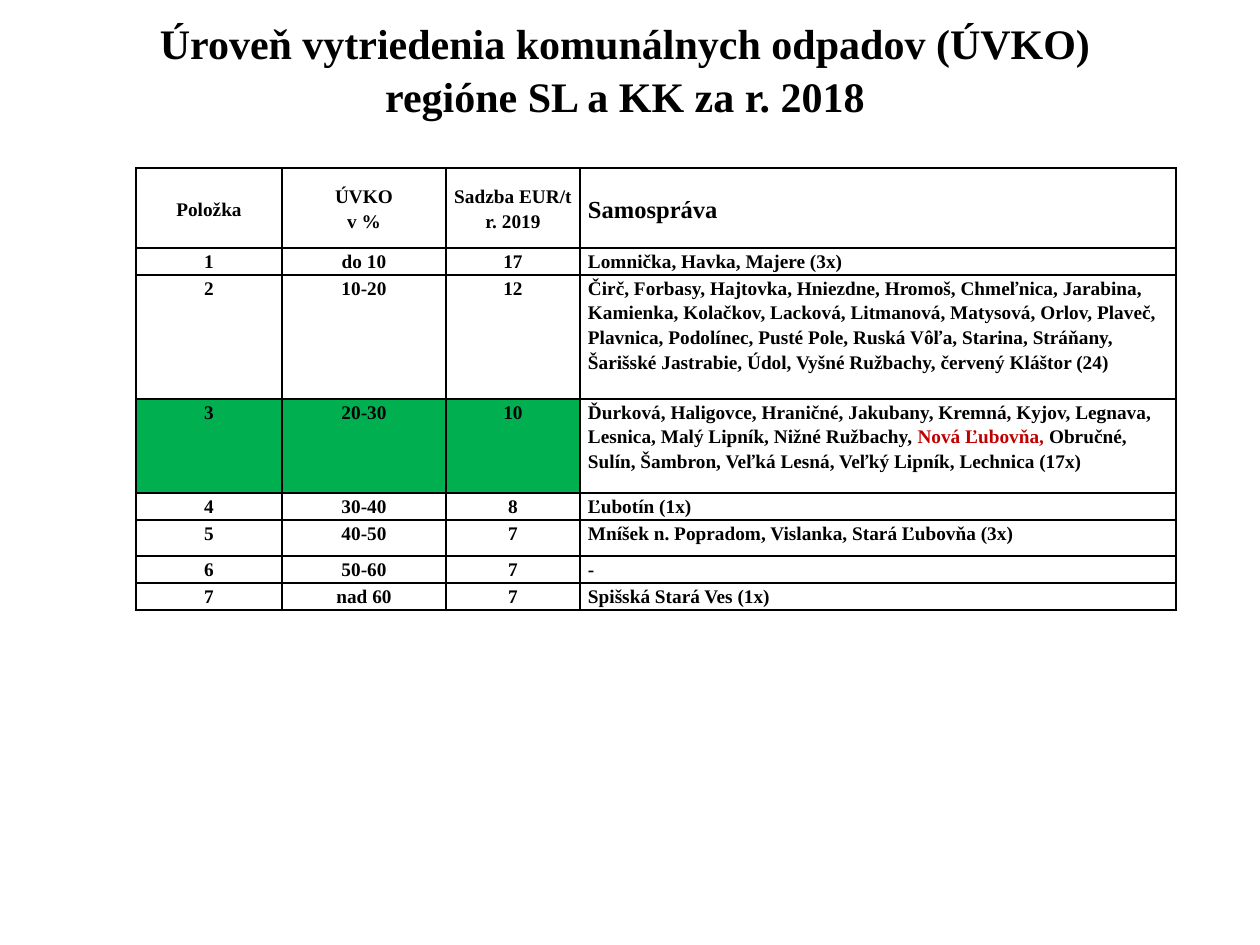
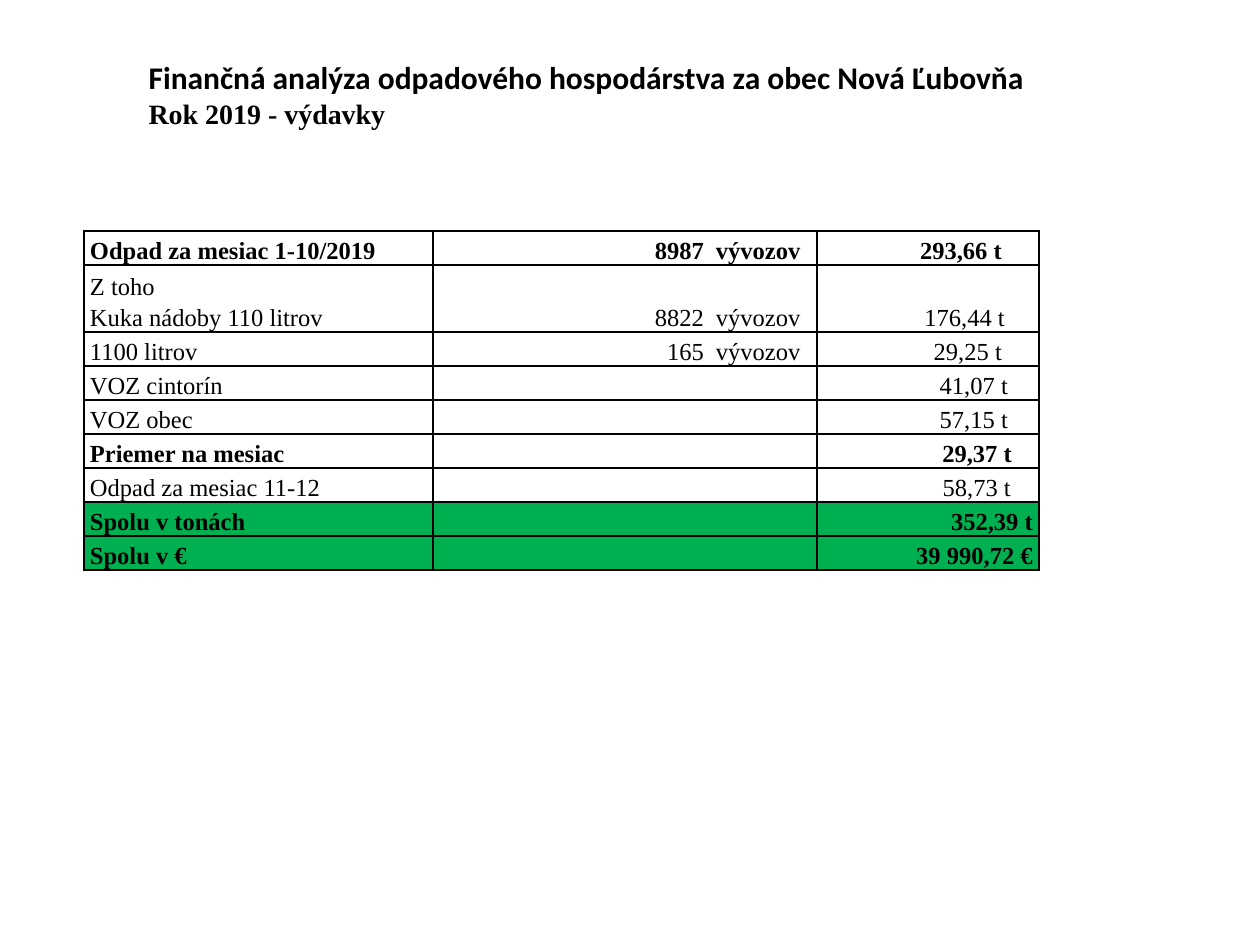
from dataclasses import dataclass

from lxml import etree
from pptx import Presentation
from pptx.dml.color import RGBColor
from pptx.enum.text import MSO_ANCHOR as ANCHOR, MSO_AUTO_SIZE as AUTO, PP_ALIGN as ALIGN
from pptx.oxml.ns import qn
from pptx.util import Emu, Pt


@dataclass(frozen=True)
class Theme:
    ink: str = "000000"
    green: str = "00B050"
    red: str = "C00000"
    serif: str = "Times New Roman"
    sans: str = "Calibri"
    heading: int = 24
    subheading: int = 18
    year: int = 16
    large: int = 14
    small: int = 11
    spacing: float = 1.15
    border: int = 1
    plain_table: str = "{2D5ABB26-0587-4C30-8999-92F81FD0307C}"


THEME = Theme()
PX = 914400 / 126
OWN_VILLAGE = "Nová Ľubovňa,"


def write(frame, lines, align, spacing=THEME.spacing):
    """Fill a text frame; each line is (runs, size, bold, font), each run (text, colour)."""
    for number, (runs, size, bold, font) in enumerate(lines):
        line = frame.paragraphs[0] if number == 0 else frame.add_paragraph()
        line.alignment, line.line_spacing = align, spacing
        for text, colour in runs:
            run = line.add_run()
            run.text = text
            for key, value in {"size": Pt(size), "bold": bold, "name": font}.items():
                setattr(run.font, key, value)
            run.font.color.rgb = RGBColor.from_string(colour)


def add_grid(slide, left, top, widths, heights, inset, open_columns=()):
    """Add a bordered table; no line is drawn to the right of the open columns."""
    frame = slide.shapes.add_table(
        len(heights), len(widths), Emu(round(left * PX)), Emu(round(top * PX)),
        Emu(round(sum(widths) * PX)), Emu(round(sum(heights) * PX)))
    next(frame.element.iter(qn("a:tableStyleId"))).text = THEME.plain_table
    table = frame.table
    table.first_row = table.horz_banding = False
    for tracks, key, lengths in ((table.columns, "width", widths), (table.rows, "height", heights)):
        for track, length in zip(tracks, lengths):
            setattr(track, key, Emu(round(length * PX)))
    for row in table.rows:
        for column, cell in enumerate(row.cells):
            cell.margin_left = cell.margin_right = Emu(round(inset * PX))
            cell.margin_top = cell.margin_bottom = 0
            properties = cell._tc.get_or_add_tcPr()
            for side in ("lnL", "lnR", "lnT", "lnB"):
                line = etree.SubElement(properties, qn(f"a:{side}"), w=str(Pt(THEME.border)))
                if (side == "lnR" and column in open_columns) or (
                        side == "lnL" and column - 1 in open_columns):
                    etree.SubElement(line, qn("a:noFill"))
                else:
                    paint = etree.SubElement(line, qn("a:solidFill"))
                    etree.SubElement(paint, qn("a:srgbClr"), val=THEME.ink)
            cell.fill.background()
    return table


deck = Presentation()
deck.slide_width, deck.slide_height = Emu(round(1260 * PX)), Emu(round(945 * PX))

# Titles of both slides
titles = [
    ((42, 10, 1166, 115), ANCHOR.MIDDLE, ALIGN.CENTER, 1.05, [
        ("Úroveň vytriedenia komunálnych odpadov (ÚVKO)", THEME.heading, THEME.serif),
        ("regióne SL a KK za r. 2018", THEME.heading, THEME.serif)]),
    ((136, -25, 976, 161), ANCHOR.BOTTOM, ALIGN.LEFT, 1.0, [
        ("Finančná analýza odpadového hospodárstva za obec Nová Ľubovňa",
         THEME.subheading, THEME.sans),
        ("Rok 2019 - výdavky", THEME.year, THEME.serif)]),
]
slides = []
for box, anchor, align, spacing, lines in titles:
    slide = deck.slides.add_slide(deck.slide_layouts[5])
    slides.append(slide)
    title = slide.shapes.title
    for key, length in zip(("left", "top", "width", "height"), box):
        setattr(title, key, Emu(round(length * PX)))
    title.text_frame.auto_size = AUTO.NONE
    title.text_frame.vertical_anchor = anchor
    write(title.text_frame,
          [([(text, THEME.ink)], size, True, font) for text, size, font in lines],
          align, spacing)
sorting_slide, costs_slide = slides

# Sorting rates by municipality
sorting_rows = [
    ("Položka", "ÚVKO\nv %", "Sadzba EUR/t\nr. 2019", "Samospráva"),
    ("1", "do 10", "17", "Lomnička, Havka, Majere (3x)"),
    ("2", "10-20", "12",
     "Čirč, Forbasy, Hajtovka, Hniezdne, Hromoš, Chmeľnica, Jarabina,\n"
     "Kamienka, Kolačkov, Lacková, Litmanová, Matysová, Orlov, Plaveč,\n"
     "Plavnica, Podolínec, Pusté Pole, Ruská Vôľa, Starina, Stráňany,\n"
     "Šarišské Jastrabie, Údol, Vyšné Ružbachy, červený Kláštor (24)"),
    ("3", "20-30", "10",
     "Ďurková, Haligovce, Hraničné, Jakubany, Kremná, Kyjov, Legnava, "
     "Lesnica, Malý Lipník, Nižné Ružbachy, Nová Ľubovňa, Obručné, "
     "Sulín, Šambron, Veľká Lesná, Veľký Lipník, Lechnica (17x)"),
    ("4", "30-40", "8", "Ľubotín (1x)"),
    ("5", "40-50", "7", "Mníšek n. Popradom, Vislanka, Stará Ľubovňa (3x)"),
    ("6", "50-60", "7", "-"),
    ("7", "nad 60", "7", "Spišská Stará Ves (1x)"),
]
sorting = add_grid(sorting_slide, 136, 168, (146, 164, 134, 596),
                   (80, 27, 124, 94, 27, 36, 27, 27), inset=8)
for row, texts in enumerate(sorting_rows):
    for column, text in enumerate(texts):
        cell = sorting.cell(row, column)
        cell.vertical_anchor = ANCHOR.MIDDLE if row == 0 else ANCHOR.TOP
        size = THEME.large if (row, column) == (0, 3) else THEME.small
        lines = []
        for line in text.split("\n"):
            before, village, after = line.partition(OWN_VILLAGE)
            runs = [(before, THEME.ink), (village, THEME.red), (after, THEME.ink)]
            lines.append(([run for run in runs if run[0]], size, True, THEME.serif))
        write(cell.text_frame, lines, ALIGN.LEFT if column == 3 else ALIGN.CENTER)
        if row == 3 and column < 3:
            cell.fill.solid()
            cell.fill.fore_color.rgb = RGBColor.from_string(THEME.green)

# Waste costs: item, collections, unit, amount, right indent of the amount, bold
cost_rows = [
    ("Odpad za mesiac 1-10/2019", "8987", "vývozov", "293,66 t", 37, True),
    ("Z toho\nKuka nádoby 110 litrov", "8822", "vývozov", "176,44 t", 34, False),
    ("1100 litrov", "165", "vývozov", "29,25 t", 37, False),
    ("VOZ cintorín", "", "", "41,07 t", 31, False),
    ("VOZ obec", "", "", "57,15 t", 31, False),
    ("Priemer na mesiac", "", "", "29,37 t", 27, True),
    ("Odpad za mesiac 11-12", "", "", "58,73 t", 28, False),
    ("Spolu v tonách", "", "", "352,39 t", 6, True),
    ("Spolu v €", "", "", "39 990,72 €", 6, True),
]
costs = add_grid(costs_slide, 84, 231, (349, 277, 107, 222),
                 [67 if "\n" in texts[0] else 34 for texts in cost_rows],
                 inset=6, open_columns=(1,))
for row, (*texts, indent, bold) in enumerate(cost_rows):
    for column, text in enumerate(texts):
        cell = costs.cell(row, column)
        cell.vertical_anchor = ANCHOR.BOTTOM
        if column == 3:
            cell.margin_right = Emu(round(indent * PX))
        if text:
            write(cell.text_frame,
                  [([(line, THEME.ink)], THEME.large, bold, THEME.serif)
                   for line in text.split("\n")],
                  ALIGN.RIGHT if column in (1, 3) else ALIGN.LEFT)
        else:
            etree.SubElement(cell.text_frame.paragraphs[0]._p, qn("a:endParaRPr"),
                             sz=str(THEME.large * 100))
        if texts[0].startswith("Spolu"):
            cell.fill.solid()
            cell.fill.fore_color.rgb = RGBColor.from_string(THEME.green)

deck.save("out.pptx")
